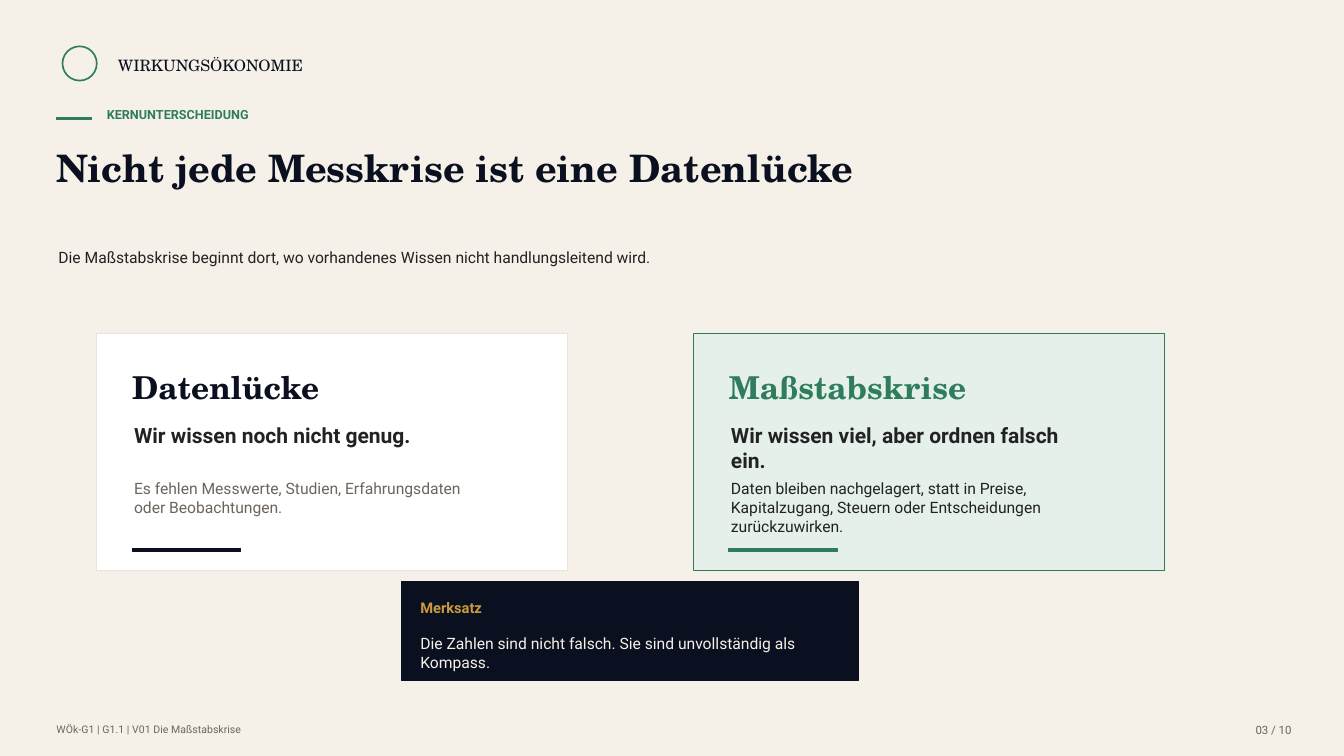
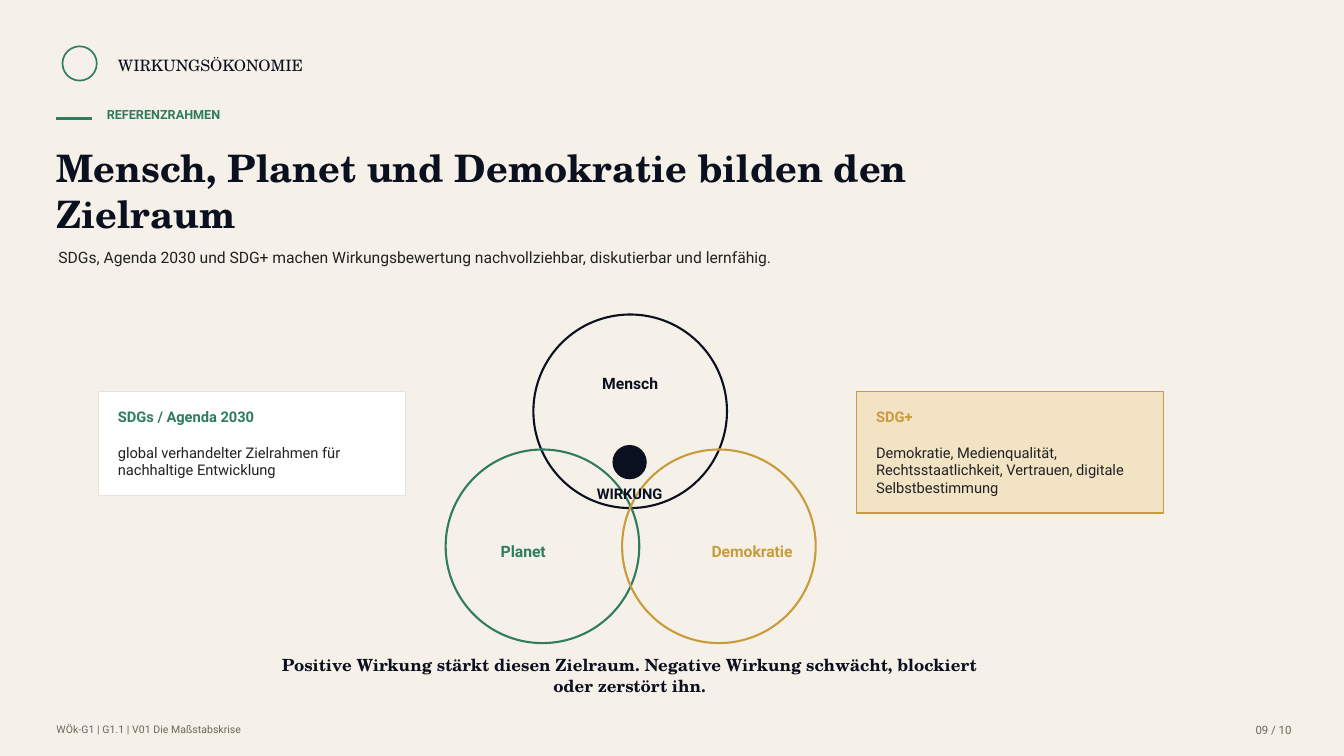
from dataclasses import dataclass

from pptx import Presentation
from pptx.dml.color import RGBColor
from pptx.enum.shapes import MSO_SHAPE as SHAPE
from pptx.enum.text import PP_ALIGN as ALIGN
from pptx.util import Inches, Pt


@dataclass(frozen=True)
class Theme:
    paper: str = "F6F1E8"
    navy: str = "0B1020"
    green: str = "2F7D5C"
    gold: str = "C89B3C"
    ink: str = "222222"
    muted: str = "6C655B"
    white: str = "FFFFFF"
    border: str = "E8E4DC"
    mint: str = "E5F0EA"
    sand: str = "F1E3C4"
    serif: str = "TeX Gyre Schola"
    sans: str = "Roboto"
    title: float = 27
    card_title: float = 22.5
    lead: float = 15
    closing: float = 12
    body: float = 11.2
    small: float = 10.5
    kicker: float = 9
    page: float = 8.2
    footer: float = 7.5


T = Theme()


def add_shape(s, kind, box, fill, line, width=0.75):
    sp = s.shapes.add_shape(kind, *map(Inches, box))
    sp.shadow.inherit = False
    if fill:
        sp.fill.solid()
        sp.fill.fore_color.rgb = RGBColor.from_string(fill)
    else:
        sp.fill.background()
    sp.line.color.rgb = RGBColor.from_string(line)
    sp.line.width = Pt(width)


def add_text(s, box, text, size, color, bold=False, font=T.sans, align=ALIGN.LEFT):
    tf = s.shapes.add_textbox(*map(Inches, box)).text_frame
    tf.word_wrap = True
    tf.margin_left = tf.margin_top = tf.margin_right = tf.margin_bottom = 0
    p = tf.paragraphs[0]
    p.alignment = align
    r = p.add_run()
    r.text = text
    r.font.name = font
    r.font.size = Pt(size)
    r.font.bold = bold
    r.font.color.rgb = RGBColor.from_string(color)


prs = Presentation()
prs.slide_width, prs.slide_height = Inches(13.33), Inches(7.5)
bg = prs.slide_master.background.fill
bg.solid()
bg.fore_color.rgb = RGBColor.from_string(T.paper)

headers = [
    ("KERNUNTERSCHEIDUNG", "Nicht jede Messkrise ist eine Datenlücke",
     "Die Maßstabskrise beginnt dort, wo vorhandenes Wissen nicht handlungsleitend wird.",
     "03 / 10"),
    ("REFERENZRAHMEN", "Mensch, Planet und Demokratie bilden den Zielraum",
     "SDGs, Agenda 2030 und SDG+ machen Wirkungsbewertung nachvollziehbar, "
     "diskutierbar und lernfähig.",
     "09 / 10"),
]
slides = []
for kicker, title, subtitle, page in headers:
    s = prs.slides.add_slide(prs.slide_layouts[6])
    add_shape(s, SHAPE.OVAL, (0.62, 0.46, 0.34, 0.34), None, T.green, 1.2)
    add_text(s, (1.17, 0.55, 2.6, 0.23), "WIRKUNGSÖKONOMIE", T.body, T.navy, font=T.serif)
    add_shape(s, SHAPE.RECTANGLE, (0.56, 1.17, 0.35, 0.02), T.green, T.green, 0)
    add_text(s, (1.06, 1.06, 4.38, 0.25), kicker, T.kicker, T.green, True)
    add_text(s, (0.56, 1.44, 9.38, 0.9), title, T.title, T.navy, True, T.serif)
    add_text(s, (0.58, 2.46, 8.33, 0.44), subtitle, T.body, T.ink)
    add_text(s, (0.56, 7.17, 5.42, 0.19), "WÖk-G1 | G1.1 | V01 Die Maßstabskrise",
             T.footer, T.muted)
    add_text(s, (12.12, 7.17, 0.69, 0.19), page, T.page, T.muted, align=ALIGN.RIGHT)
    slides.append(s)
contrast, frame = slides

cards = [
    (0.96, T.white, T.border, T.navy, T.muted, "Datenlücke", "Wir wissen noch nicht genug.",
     "Es fehlen Messwerte, Studien, Erfahrungsdaten oder Beobachtungen."),
    (6.88, T.mint, T.green, T.green, T.ink, "Maßstabskrise",
     "Wir wissen viel, aber ordnen falsch ein.",
     "Daten bleiben nachgelagert, statt in Preise, Kapitalzugang, Steuern oder "
     "Entscheidungen zurückzuwirken."),
]
for x, fill, line, accent, body_color, heading, lead, body in cards:
    add_shape(contrast, SHAPE.RECTANGLE, (x, 3.31, 4.67, 2.35), fill, line)
    add_text(contrast, (x + 0.35, 3.65, 3.12, 0.35), heading, T.card_title, accent, True, T.serif)
    add_text(contrast, (x + 0.37, 4.19, 3.54, 0.46), lead, T.lead, T.ink, True)
    add_text(contrast, (x + 0.37, 4.75, 3.56, 0.73), body, T.body, body_color)
    add_shape(contrast, SHAPE.RECTANGLE, (x + 0.35, 5.44, 1.08, 0.03), accent, accent, 0)

ring = 1.92
rings = [
    (5.29, 3.12, T.navy, "Mensch", 6.25, 3.71),
    (4.42, 4.46, T.green, "Planet", 5.19, 5.38),
    (6.17, 4.46, T.gold, "Demokratie", 7.46, 5.38),
]
for x, y, color, label, center, top in rings:
    add_shape(frame, SHAPE.OVAL, (x, y, ring, ring), None, color, 1.5)
    add_text(frame, (center - 0.7, top, 1.4, 0.21), label, T.body, color, True,
             align=ALIGN.CENTER)
add_shape(frame, SHAPE.OVAL, (6.08, 4.42, 0.33, 0.33), T.navy, T.navy)
add_text(frame, (5.6, 4.81, 1.29, 0.21), "WIRKUNG", T.small, T.navy, True, align=ALIGN.CENTER)
add_text(frame, (2.6, 6.5, 7.29, 0.44),
         "Positive Wirkung stärkt diesen Zielraum. Negative Wirkung schwächt, "
         "blockiert oder zerstört ihn.",
         T.closing, T.navy, True, T.serif, ALIGN.CENTER)

panels = [
    (contrast, (3.98, 5.77, 4.54, 0.98), T.navy, T.navy, T.gold, T.paper, T.body,
     "Merksatz", "Die Zahlen sind nicht falsch. Sie sind unvollständig als Kompass."),
    (frame, (0.98, 3.88, 3.04, 1.04), T.white, T.border, T.green, T.ink, T.small,
     "SDGs / Agenda 2030", "global verhandelter Zielrahmen für nachhaltige Entwicklung"),
    (frame, (8.5, 3.88, 3.04, 1.21), T.sand, T.gold, T.gold, T.ink, T.small, "SDG+",
     "Demokratie, Medienqualität, Rechtsstaatlichkeit, Vertrauen, digitale Selbstbestimmung"),
]
for s, box, fill, line, accent, body_color, size, heading, body in panels:
    x, y, w, h = box
    add_shape(s, SHAPE.RECTANGLE, box, fill, line)
    add_text(s, (x + 0.19, y + 0.17, w - 0.37, 0.25), heading, T.small, accent, True)
    add_text(s, (x + 0.19, y + 0.52, w - 0.37, h - 0.67), body, size, body_color)

prs.save("out.pptx")
